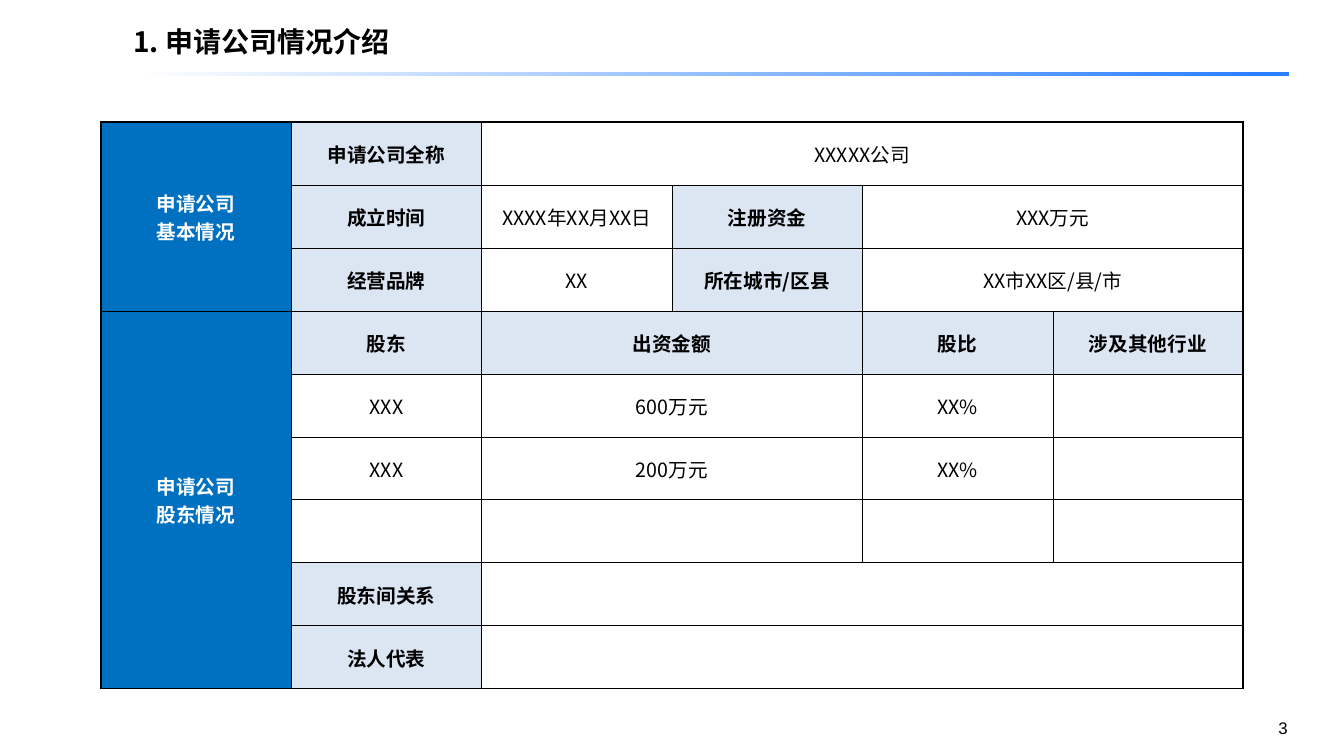
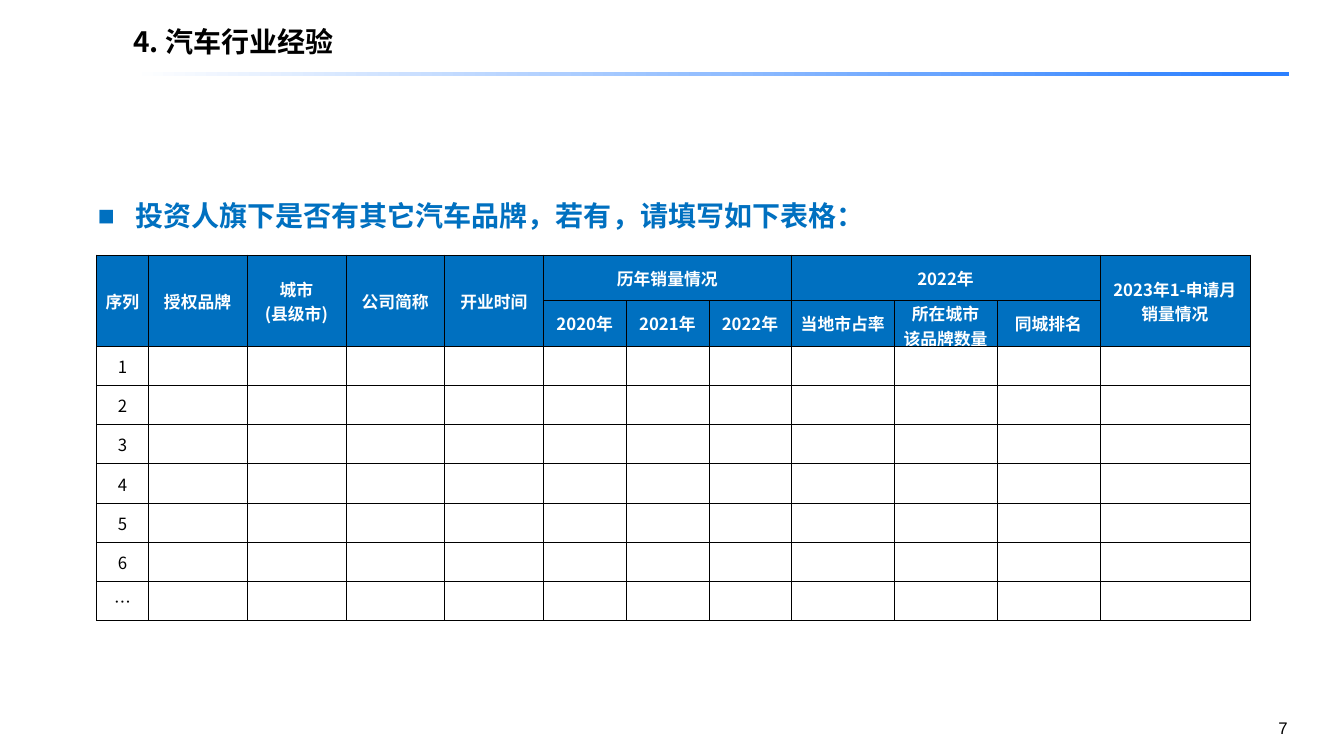
"""Build two dealer application slides with form tables."""
from dataclasses import dataclass
from itertools import product

from lxml.etree import SubElement
from pptx import Presentation
from pptx.dml.color import RGBColor
from pptx.enum.shapes import MSO_SHAPE
from pptx.enum.text import MSO_ANCHOR, MSO_AUTO_SIZE, PP_ALIGN
from pptx.oxml.ns import qn
from pptx.slide import Slide
from pptx.util import Inches, Pt

CJK = "Noto Sans CJK SC"
BLUE, PALE, WHITE, BLACK = "0070C0", "DCE6F2", "FFFFFF", "000000"
RULE_STOPS = ((0, WHITE), (51, "91BDFF"), (97, "2C80FF"))
TITLE_ONLY, TITLE_AND_BODY = 5, 1


@dataclass(frozen=True)
class Tone:
    fill: str
    ink: str
    bold: bool


HEAD = Tone(BLUE, WHITE, True)
LABEL = Tone(PALE, BLACK, True)
VALUE = Tone(WHITE, BLACK, False)


@dataclass(frozen=True)
class Entry:
    row: int
    col: int
    text: str = ""
    tone: Tone = VALUE
    rows: int = 1
    cols: int = 1


@dataclass(frozen=True)
class Form:
    left: float
    top: float
    widths: list[float]
    heights: list[float]
    size: int
    frame: float
    entries: list[Entry]


COMPANY = Form(1, 1.21, [11.33 / 6] * 6, [5.62 / 9] * 9, 14, 1.5, [
    Entry(0, 0, "申请公司\n基本情况", HEAD, rows=3),
    Entry(0, 1, "申请公司全称", LABEL),
    Entry(0, 2, "XXXXX公司", cols=4),
    Entry(1, 1, "成立时间", LABEL),
    Entry(1, 2, "XXXX年XX月XX日"),
    Entry(1, 3, "注册资金", LABEL),
    Entry(1, 4, "XXX万元", cols=2),
    Entry(2, 1, "经营品牌", LABEL),
    Entry(2, 2, "XX"),
    Entry(2, 3, "所在城市/区县", LABEL),
    Entry(2, 4, "XX市XX区/县/市", cols=2),
    Entry(3, 0, "申请公司\n股东情况", HEAD, rows=6),
    Entry(3, 1, "股东", LABEL),
    Entry(3, 2, "出资金额", LABEL, cols=2),
    Entry(3, 4, "股比", LABEL),
    Entry(3, 5, "涉及其他行业", LABEL),
    Entry(4, 1, "XXX"),
    Entry(4, 2, "600万元", cols=2),
    Entry(4, 4, "XX%"),
    Entry(5, 1, "XXX"),
    Entry(5, 2, "200万元", cols=2),
    Entry(5, 4, "XX%"),
    Entry(6, 2, cols=2),
    Entry(7, 1, "股东间关系", LABEL),
    Entry(7, 2, cols=4),
    Entry(8, 1, "法人代表", LABEL),
    Entry(8, 2, cols=4),
])

TALL_HEADS = {0: "序列", 1: "授权品牌", 2: "城市\n(县级市)", 3: "公司简称",
              4: "开业时间", 11: "2023年1-申请月\n销量情况"}
SUB_HEADS = ["2020年", "2021年", "2022年", "当地市占率",
             "所在城市\n该品牌数量", "同城排名"]
SALES = Form(
    0.96, 2.53, [0.51] + [0.98] * 4 + [0.82] * 3 + [1.02] * 3 + [1.49],
    [0.45] * 2 + [0.39] * 7, 12, 0.5,
    [Entry(0, col, text, HEAD, rows=2) for col, text in TALL_HEADS.items()]
    + [Entry(0, 5, "历年销量情况", HEAD, cols=3),
       Entry(0, 8, "2022年", HEAD, cols=3)]
    + [Entry(1, col, text, HEAD) for col, text in enumerate(SUB_HEADS, 5)]
    + [Entry(row, 0, text) for row, text in enumerate("123456…", 2)])


def rgb(value: str) -> RGBColor:
    return RGBColor.from_string(value)


def set_font(paragraph, size: float, ink: str = BLACK, bold: bool = False,
             face: str = CJK) -> None:
    font = paragraph.font
    font.size, font.bold, font.name = Pt(size), bold, face
    font.color.rgb = rgb(ink)
    defaults = paragraph._p.pPr.find(qn("a:defRPr"))
    SubElement(defaults, qn("a:ea"), typeface=face)


def place(shape, left: float, top: float, width: float, height: float) -> None:
    shape.left, shape.top = Inches(left), Inches(top)
    shape.width, shape.height = Inches(width), Inches(height)


def draw_rule(slide: Slide) -> None:
    rule = slide.shapes.add_shape(MSO_SHAPE.RECTANGLE, Inches(1.3),
                                  Inches(0.71), Inches(11.48), Inches(0.04))
    rule.shadow.inherit = False
    rule.line.fill.background()
    rule.fill.gradient()
    rule.fill.gradient_angle = 0
    stops = rule._element.spPr.find(qn("a:gradFill")).find(qn("a:gsLst"))
    for stop in list(stops):
        stops.remove(stop)
    for share, color in RULE_STOPS:
        stop = SubElement(stops, qn("a:gs"), pos=str(share * 1000))
        SubElement(stop, qn("a:srgbClr"), val=color)


def add_page(deck, layout: int, heading: str, number: int) -> Slide:
    slide = deck.slides.add_slide(deck.slide_layouts[layout])
    draw_rule(slide)

    title = slide.shapes.title
    place(title, 1.24, 0.06, 11.5, 0.75)
    frame = title.text_frame
    frame.text = heading
    frame.auto_size = MSO_AUTO_SIZE.NONE
    frame.vertical_anchor = MSO_ANCHOR.MIDDLE
    frame.margin_left = frame.margin_right = Inches(0.08)
    frame.margin_top = frame.margin_bottom = Inches(0.04)
    line = frame.paragraphs[0]
    line.alignment, line.line_spacing = PP_ALIGN.LEFT, 0.9
    set_font(line, 20, bold=True)

    folio = slide.shapes.add_textbox(Inches(11.13), Inches(7.07),
                                     Inches(1.74), Inches(0.3)).text_frame
    folio.word_wrap = True
    folio.text = str(number)
    folio.paragraphs[0].alignment = PP_ALIGN.RIGHT
    set_font(folio.paragraphs[0], 12, face="Arial")
    return slide


def fill_prompt(slide: Slide, text: str) -> None:
    prompt = slide.placeholders[1]
    place(prompt, 0.87, 1.92, 8.11, 0.47)
    prompt.text_frame.text = text
    prompt.text_frame.auto_size = MSO_AUTO_SIZE.NONE
    line = prompt.text_frame.paragraphs[0]
    line.space_before = Pt(0)
    properties = line._p.get_or_add_pPr()
    properties.set("marL", str(Inches(0.37)))
    properties.set("indent", str(Inches(-0.37)))
    SubElement(properties, qn("a:buFont"), typeface="Arial")
    SubElement(properties, qn("a:buChar"), char="■")
    set_font(line, 20, BLUE, True)


def set_borders(cell, widths: dict[str, float]) -> None:
    properties = cell._tc.get_or_add_tcPr()
    for side, width in widths.items():
        edge = SubElement(properties, qn(f"a:ln{side}"), w=str(Pt(width)))
        fill = SubElement(edge, qn("a:solidFill"))
        SubElement(fill, qn("a:srgbClr"), val=BLACK)


def draw_form(slide: Slide, form: Form) -> None:
    row_count, col_count = len(form.heights), len(form.widths)
    table = slide.shapes.add_table(
        row_count, col_count, Inches(form.left), Inches(form.top),
        Inches(sum(form.widths)), Inches(sum(form.heights))).table
    table.first_row = table.horz_banding = False
    for column, width in zip(table.columns, form.widths):
        column.width = Inches(width)
    for row, height in zip(table.rows, form.heights):
        row.height = Inches(height)

    entries = {(entry.row, entry.col): entry for entry in form.entries}
    for row, col in product(range(row_count), range(col_count)):
        entry = entries.get((row, col), Entry(row, col))
        cell = table.cell(row, col)
        on_frame = {"L": col == 0, "R": col + entry.cols == col_count,
                    "T": row == 0, "B": row + entry.rows == row_count}
        set_borders(cell, {side: form.frame if outer else 0.25
                           for side, outer in on_frame.items()})
        cell.fill.solid()
        cell.fill.fore_color.rgb = rgb(entry.tone.fill)
        cell.vertical_anchor = MSO_ANCHOR.MIDDLE
        cell.margin_left = cell.margin_right = Inches(0.02)
        cell.margin_top, cell.margin_bottom = Inches(0.01), 0
        cell.text_frame.text = entry.text
        for line in cell.text_frame.paragraphs:
            line.alignment = PP_ALIGN.CENTER
            set_font(line, form.size, entry.tone.ink, entry.tone.bold)

    for entry in form.entries:
        if entry.rows * entry.cols > 1:
            table.cell(entry.row, entry.col).merge(table.cell(
                entry.row + entry.rows - 1, entry.col + entry.cols - 1))


def main() -> None:
    deck = Presentation()
    deck.slide_width, deck.slide_height = Inches(13.33), Inches(7.5)

    company = add_page(deck, TITLE_ONLY, "1. 申请公司情况介绍", 3)
    draw_form(company, COMPANY)

    experience = add_page(deck, TITLE_AND_BODY, "4. 汽车行业经验", 7)
    fill_prompt(experience, "投资人旗下是否有其它汽车品牌，若有，请填写如下表格：")
    draw_form(experience, SALES)

    deck.save("out.pptx")


if __name__ == "__main__":
    main()
